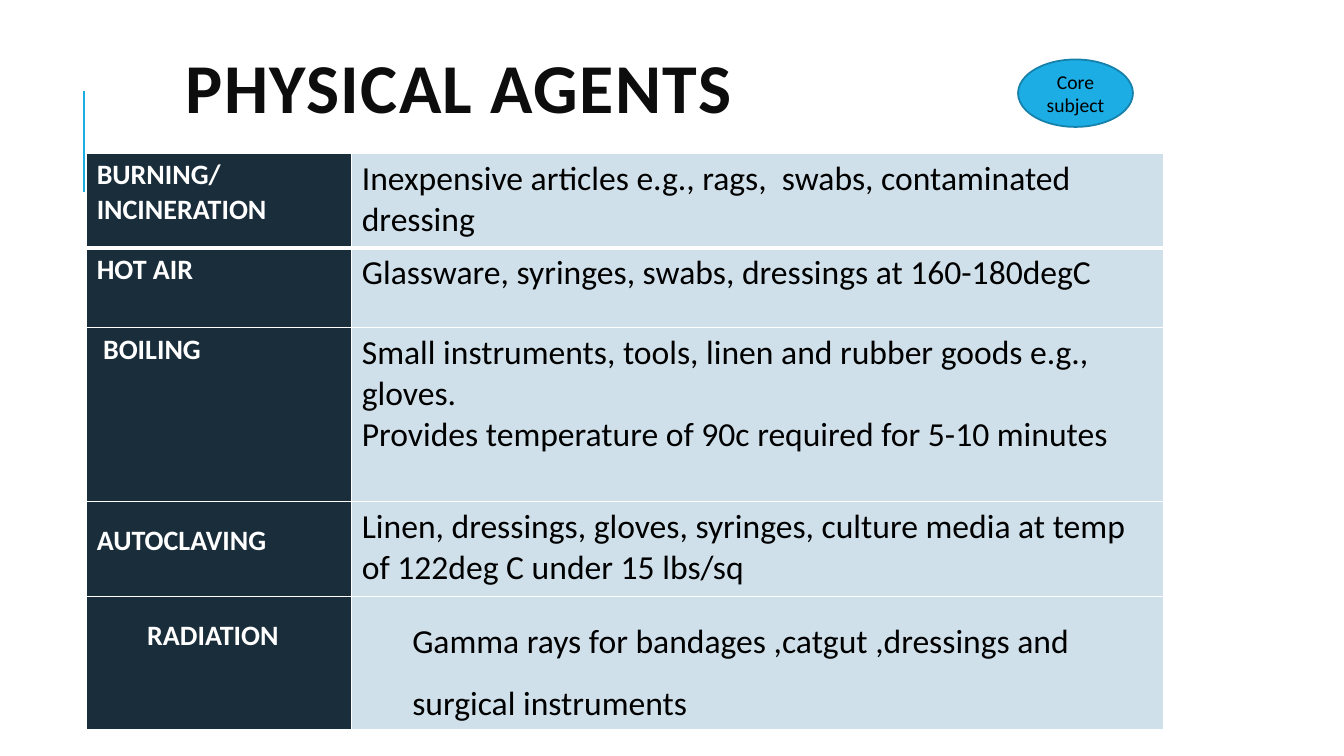
"""Builds the slide on physical agents of sterilisation."""
from lxml import etree
from pptx import Presentation
from pptx.dml.color import RGBColor
from pptx.enum.shapes import MSO_CONNECTOR, MSO_SHAPE
from pptx.enum.text import MSO_ANCHOR, MSO_AUTO_SIZE, PP_ALIGN
from pptx.oxml.ns import qn
from pptx.util import Pt

STRAIGHT = MSO_CONNECTOR.STRAIGHT
OVAL = MSO_SHAPE.OVAL
MIDDLE = MSO_ANCHOR.MIDDLE
NO_AUTOFIT = MSO_AUTO_SIZE.NONE
LEFT, CENTER = PP_ALIGN.LEFT, PP_ALIGN.CENTER
TITLE_ONLY = 5

ACCENT = "1CADE4"
LABEL = {"size": 20, "bold": True, "color": "FFFFFF", "fill": "1A2D3A"}
DETAIL = {"size": 24, "bold": False, "color": "000000", "fill": "CFE0EA"}
SPACED = {"line_spacing": 1.5, "space_after": Pt(6)}

AGENTS = [
    (67.7, "BURNING/ INCINERATION",
     "Inexpensive articles e.g., rags,  swabs, contaminated dressing", {}, {}, 0),
    (56.9, "HOT AIR",
     "Glassware, syringes, swabs, dressings at 160-180degC", {}, {}, 0),
    (124.3, " BOILING",
     "Small instruments, tools, linen and rubber goods e.g., gloves.\n"
     "Provides temperature of 90c required for 5-10 minutes", {}, {}, 0),
    (67.7, "AUTOCLAVING",
     "Linen, dressings, gloves, syringes, culture media at temp of 122deg C under 15 lbs/sq",
     SPACED, {}, 0),
    (93.6, "RADIATION",
     "Gamma rays for bandages ,catgut ,dressings and surgical instruments",
     SPACED, SPACED, 36),
]


def rgb(value):
    return RGBColor.from_string(value)


def write(frame, text, size, color, bold=False, **layout):
    frame.text = text
    for para in frame.paragraphs:
        for name, value in layout.items():
            setattr(para, name, value)
        for span in para.runs:
            for name, value in {"name": "Calibri", "size": Pt(size), "bold": bold}.items():
                setattr(span.font, name, value)
            span.font.color.rgb = rgb(color)


deck = Presentation()
deck.slide_width, deck.slide_height = Pt(960), Pt(540)
page = deck.slides.add_slide(deck.slide_layouts[TITLE_ONLY])

rule = page.shapes.add_connector(STRAIGHT, Pt(60), Pt(136.8), Pt(60), Pt(64.8))
rule.line.color.rgb = rgb(ACCENT)
rule.line.width = Pt(1.5)
etree.SubElement(rule._element.spPr, qn("a:effectLst"))

title = page.shapes.title
title.left, title.top, title.width, title.height = Pt(125.3), Pt(18.7), Pt(720.7), Pt(96.5)
title.text_frame.auto_size = NO_AUTOFIT
title.text_frame.vertical_anchor = MIDDLE
write(title.text_frame, "PHYSICAL AGENTS", 50, "0D0D0D", True, alignment=LEFT, line_spacing=0.8)
title.text_frame.paragraphs[0].runs[0].font._element.set("spc", "100")

table = page.shapes.add_table(len(AGENTS), 2, Pt(61.9), Pt(109.4), Pt(769), Pt(410.2)).table
table.first_row = table.horz_banding = False
for column, width in zip(table.columns, (189.4, 579.6)):
    column.width = Pt(width)

for index, (height, label, detail, label_layout, detail_layout, indent) in enumerate(AGENTS):
    table.rows[index].height = Pt(height)
    cells = ((label, LABEL, label_layout), (detail, DETAIL, detail_layout))
    for column, (text, style, layout) in enumerate(cells):
        cell = table.cell(index, column)
        write(cell.text_frame, text, style["size"], style["color"], style["bold"], **layout)
        if indent:
            for para in cell.text_frame.paragraphs:
                para._p.get_or_add_pPr().set("marL", str(Pt(indent)))
        thick = {0: "lnB", 1: "lnT"}.get(index)
        properties = cell._tc.get_or_add_tcPr()
        for side in ("lnL", "lnR", "lnT", "lnB"):
            border = etree.SubElement(properties, qn(f"a:{side}"), w=str(Pt(3 if side == thick else 1)))
            paint = etree.SubElement(border, qn("a:solidFill"))
            etree.SubElement(paint, qn("a:srgbClr"), val="FFFFFF")
        cell.fill.solid()
        cell.fill.fore_color.rgb = rgb(style["fill"])

badge = page.shapes.add_shape(OVAL, Pt(727.2), Pt(42.5), Pt(82.1), Pt(48.2))
badge.shadow.inherit = False
badge.fill.solid()
badge.fill.fore_color.rgb = rgb(ACCENT)
badge.line.color.rgb = rgb("1580A9")
badge.line.width = Pt(1.25)
badge.text_frame.word_wrap = True
badge.text_frame.vertical_anchor = MIDDLE
write(badge.text_frame, "Core subject", 14, "000000", alignment=CENTER)

deck.save("out.pptx")
